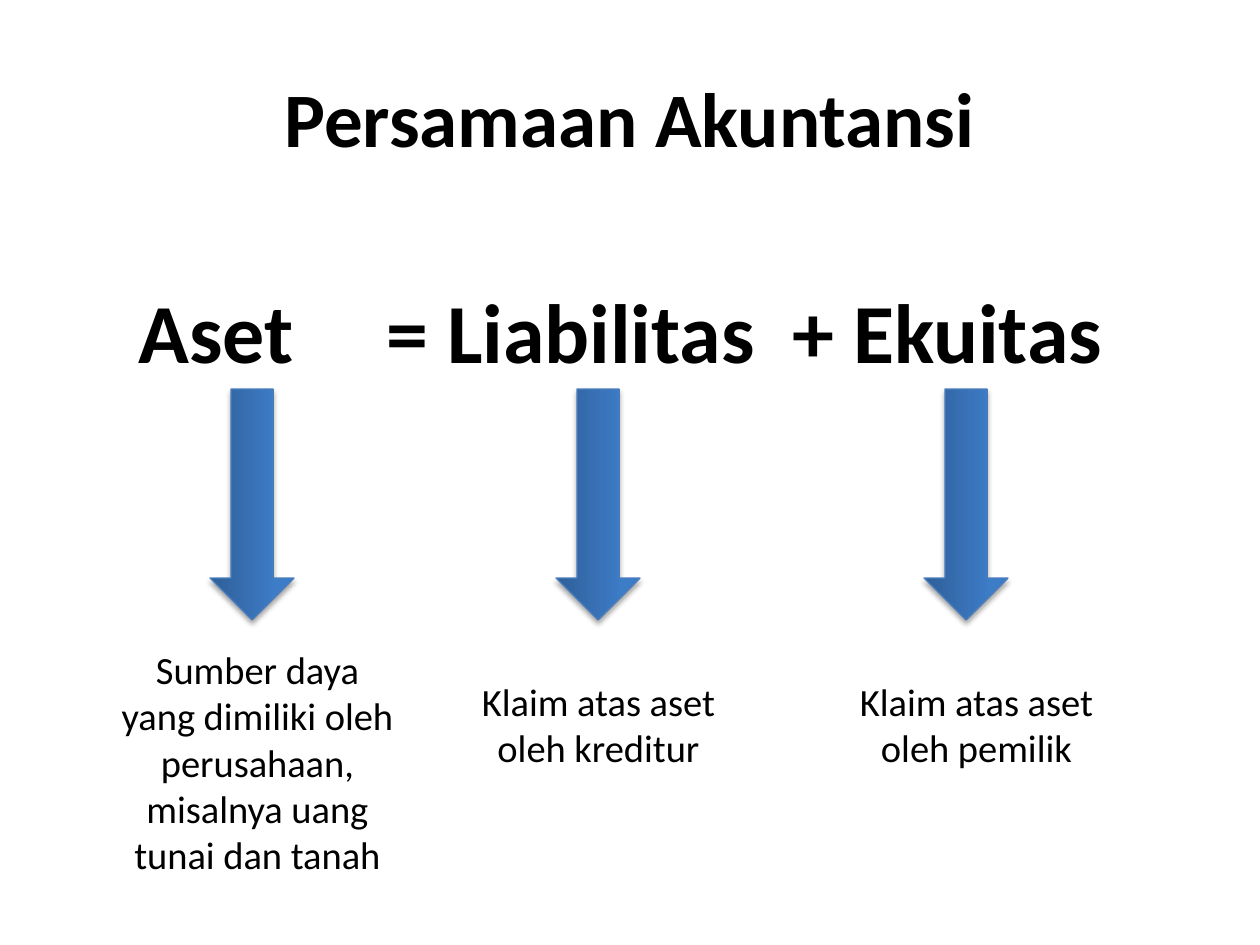
from copy import deepcopy

from lxml import etree
from pptx import Presentation
from pptx import util as u
from pptx.dml.color import RGBColor
from pptx.enum import shapes, text
from pptx.oxml import ns

SCALE = 914400 / 126
STOPS = [(0, "2F5F99"), (0.8, "3D7CC7"), (1, "3A7CCB")]
TERMS = [
    ((105, 640, 305, 246), 252,
     "Sumber daya yang dimiliki oleh perusahaan, misalnya uang tunai dan tanah"),
    ((462, 672, 273, 106), 598, "Klaim atas aset oleh kreditur"),
    ((840, 672, 273, 106), 966, "Klaim atas aset oleh pemilik"),
]


def px(num):
    return u.Emu(round(num * SCALE))


def color(code):
    return RGBColor.from_string(code)


def node(parent, tag, **attrs):
    item = etree.SubElement(parent, ns.qn(tag))
    for key, value in attrs.items():
        item.set(key, str(value))
    return item


def write(slide, box, words, size, bold=False, align="CENTER", anchor="TOP",
          wrap=True, tabs=()):
    frame = slide.shapes.add_textbox(*map(px, box)).text_frame
    frame.word_wrap = wrap
    frame.vertical_anchor = text.MSO_ANCHOR[anchor]
    para = frame.paragraphs[0]
    para.alignment = text.PP_ALIGN[align]
    run = para.add_run()
    run.text = words
    font = run.font
    font.name, font.size, font.bold = "Calibri", u.Pt(size), bold
    font.color.rgb = color("000000")
    if tabs:
        stops = node(para._p.get_or_add_pPr(), "a:tabLst")
        for tab in tabs:
            node(stops, "a:tab", pos=px(tab), algn="l")


def arrow(slide, mid, top, width, height):
    left = mid - height / 2
    shape = slide.shapes.add_shape(
        shapes.MSO_SHAPE.RIGHT_ARROW,
        *map(px, (left, top + (height - width) / 2, height, width)))
    shape.rotation = 90
    fill = shape.fill
    fill.gradient()
    fill.gradient_angle = 90
    first = shape._element.spPr.find(".//" + ns.qn("a:gs"))
    first.addnext(deepcopy(first))
    for stop, (place, code) in zip(fill.gradient_stops, STOPS):
        stop.position = place
        stop.color.rgb = color(code)
    shape.line.color.rgb = color("4B7EBC")
    shape.line.width = u.Pt(0.75)
    shape.shadow.inherit = False
    effects = shape._element.spPr.find(ns.qn("a:effectLst"))
    shade = node(effects, "a:outerShdw", blurRad=u.Pt(3.1), dist=u.Pt(1.8),
                 dir=5400000, rotWithShape=0)
    node(node(shade, "a:srgbClr", val="000000"), "a:alpha", val=35000)


def title(slide, box):
    write(slide, box, "Persamaan Akuntansi", 44, bold=True, anchor="MIDDLE")


def formula(slide, box):
    write(slide, box, "Aset\t= Liabilitas\t+ Ekuitas", 48, bold=True,
          align="LEFT", wrap=False, tabs=(248, 654))


def term(slide, box, mid, words):
    arrow(slide, mid, 389, 84, 231)
    write(slide, box, words, 22)


def main():
    deck = Presentation()
    deck.slide_width, deck.slide_height = px(1260), px(945)
    slide = deck.slides.add_slide(deck.slide_layouts[6])
    title(slide, (63, 38, 1134, 158))
    formula(slide, (126, 273, 1005, 115))
    for box, mid, words in TERMS:
        term(slide, box, mid, words)
    deck.save("out.pptx")


if __name__ == "__main__":
    main()
